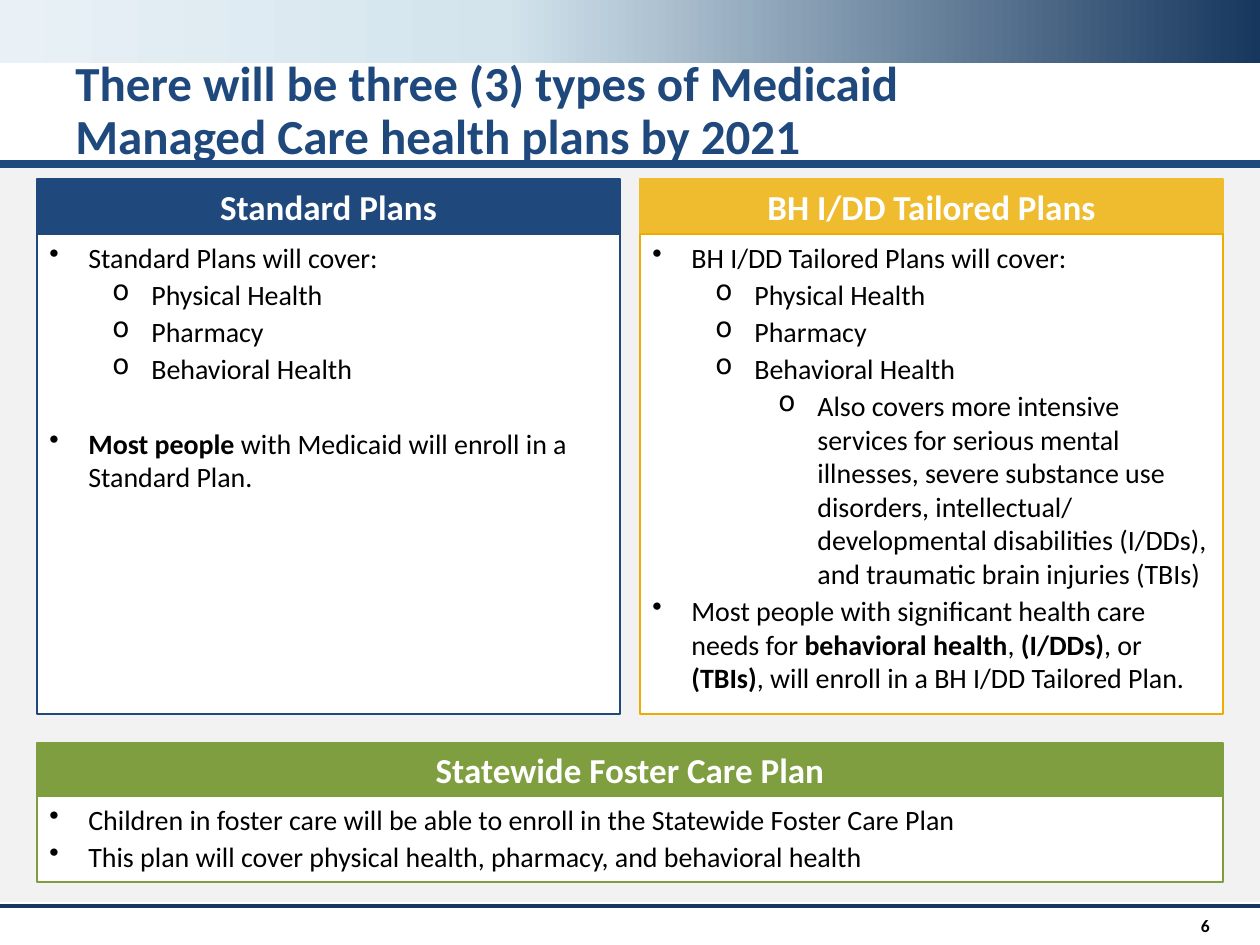
from copy import deepcopy
from dataclasses import dataclass
from lxml.etree import SubElement
from pptx import Presentation
from pptx.dml.color import RGBColor
from pptx.enum.shapes import MSO_CONNECTOR, MSO_SHAPE
from pptx.enum.text import MSO_ANCHOR, PP_ALIGN
from pptx.oxml.ns import qn
from pptx.util import Emu, Pt


@dataclass(frozen=True)
class Theme:
    font: str = "Calibri"
    navy: str = "1F497D"
    deep: str = "17375E"
    gold: str = "EFBB2F"
    amber: str = "F0AB00"
    green: str = "7F9E3F"
    gray: str = "F2F2F2"
    white: str = "FFFFFF"
    black: str = "000000"
    banner: tuple = ((0, "E9F1F6"), (0.4, "D3E4ED"), (1, "17375E"))
    title: int = 28
    head: int = 20
    body: int = 16
    number: int = 10


T = Theme()
PX = 914400 / 126
W, H = 1260, 945
LEFT, CARD_W, GAP = 37, 583, 20
FULL_W = 2 * CARD_W + GAP
INDENT, STEP = 39, 63
BULLETS = "•oo"
BLANK_LINE = 21.5

TITLE = "There will be three (3) types of Medicaid Managed Care health plans by 2021"
NUMBER = "6"
COVERED = [(1, "Physical Health"), (1, "Pharmacy"), (1, "Behavioral Health")]
STANDARD = [
    (0, "Standard Plans will cover:"),
    *COVERED,
    (0, "**Most people** with Medicaid will enroll in a Standard Plan.", BLANK_LINE),
]
TAILORED = [
    (0, "BH I/DD Tailored Plans will cover:"),
    *COVERED,
    (2, "Also covers more intensive services for serious mental illnesses, "
        "severe substance use disorders, intellectual/ developmental "
        "disabilities (I/DDs), and traumatic brain injuries (TBIs)"),
    (0, "Most people with significant health care needs for **behavioral health**, "
        "**(I/DDs)**, or **(TBIs)**, will enroll in a BH I/DD Tailored Plan."),
]
FOSTER = [
    (0, "Children in foster care will be able to enroll in the Statewide Foster Care Plan"),
    (0, "This plan will cover physical health, pharmacy, and behavioral health"),
]
CARDS = [
    ("Standard Plans", STANDARD, T.navy, T.navy, (LEFT, 179, CARD_W), (55, 480)),
    ("BH I/DD Tailored Plans", TAILORED, T.gold, T.amber,
     (LEFT + CARD_W + GAP, 179, CARD_W), (55, 480)),
    ("Statewide Foster Care Plan", FOSTER, T.green, T.green,
     (LEFT, 743, FULL_W), (53, 86)),
]


def px(n):
    return Emu(round(n * PX))


def rgb(value):
    return RGBColor.from_string(value)


def add_rect(s, x, y, w, h, fill=None, line=None):
    sp = s.shapes.add_shape(MSO_SHAPE.RECTANGLE, px(x), px(y), px(w), px(h))
    sp.shadow.inherit = False
    if fill:
        sp.fill.solid()
        sp.fill.fore_color.rgb = rgb(fill)
    if line:
        sp.line.color.rgb = rgb(line)
        sp.line.width = Pt(1)
    else:
        sp.line.fill.background()
    return sp


def add_banner(s):
    sp = add_rect(s, 0, 0, W, 63)
    sp.fill.gradient()
    sp.fill.gradient_angle = 0
    first = next(sp._element.iter(qn("a:gs")))
    first.addnext(deepcopy(first))
    for stop, (position, color) in zip(sp.fill.gradient_stops, T.banner):
        stop.position = position
        stop.color.rgb = rgb(color)


def add_rule(s, y, color, width):
    c = s.shapes.add_connector(MSO_CONNECTOR.STRAIGHT, 0, px(y), px(W), px(y))
    c.line.color.rgb = rgb(color)
    c.line.width = Pt(width)
    SubElement(c._element.spPr, qn("a:effectLst"))


def write(p, text, size=T.body, color=T.black, bold=False, align=PP_ALIGN.LEFT):
    p.alignment = align
    for i, part in enumerate(text.split("**")):
        if part:
            r = p.add_run()
            r.text = part
            r.font.name = T.font
            r.font.size = Pt(size)
            r.font.bold = bold or i % 2 == 1
            r.font.color.rgb = rgb(color)


def add_label(s, x, y, w, h, text, anchor=MSO_ANCHOR.TOP, spacing=None, **style):
    tf = s.shapes.add_textbox(px(x), px(y), px(w), px(h)).text_frame
    tf.word_wrap = True
    tf.vertical_anchor = anchor
    tf.paragraphs[0].line_spacing = spacing
    write(tf.paragraphs[0], text, bold=True, **style)


def add_item(p, level, text, before=0):
    p.level = level
    p.space_after = Pt(2)
    if before:
        p.space_before = Pt(before)
    pPr = p._p.get_or_add_pPr()
    pPr.set("marL", str(px(INDENT + STEP * level)))
    pPr.set("indent", str(-px(INDENT)))
    SubElement(pPr, qn("a:buChar"), char=BULLETS[level])
    write(p, text)


def add_card(s, head, items, fill, line, place, heights):
    x, y, w = place
    head_h, body_h = heights
    sp = add_rect(s, x, y, w, head_h, fill, fill)
    sp.text_frame.vertical_anchor = MSO_ANCHOR.MIDDLE
    write(sp.text_frame.paragraphs[0], head, size=T.head, color=T.white,
          bold=True, align=PP_ALIGN.CENTER)
    tf = add_rect(s, x, y + head_h, w, body_h, T.white, line).text_frame
    tf.word_wrap = True
    tf.vertical_anchor = MSO_ANCHOR.TOP
    for i, item in enumerate(items):
        add_item(tf.add_paragraph() if i else tf.paragraphs[0], *item)


def main():
    prs = Presentation()
    prs.slide_width, prs.slide_height = px(W), px(H)
    s = prs.slides.add_slide(prs.slide_layouts[6])
    add_banner(s)
    add_rule(s, 906, T.deep, 2.25)
    add_label(s, 63, 53, 1038, 76, TITLE, spacing=0.9, size=T.title, color=T.navy)
    add_label(s, 1144, 906, 78, 39, NUMBER, anchor=MSO_ANCHOR.MIDDLE,
              size=T.number, align=PP_ALIGN.RIGHT)
    add_rect(s, 0, 164, W, 738, T.gray)
    add_rule(s, 164, T.navy, 4.5)
    for card in CARDS:
        add_card(s, *card)
    prs.save("out.pptx")


if __name__ == "__main__":
    main()
